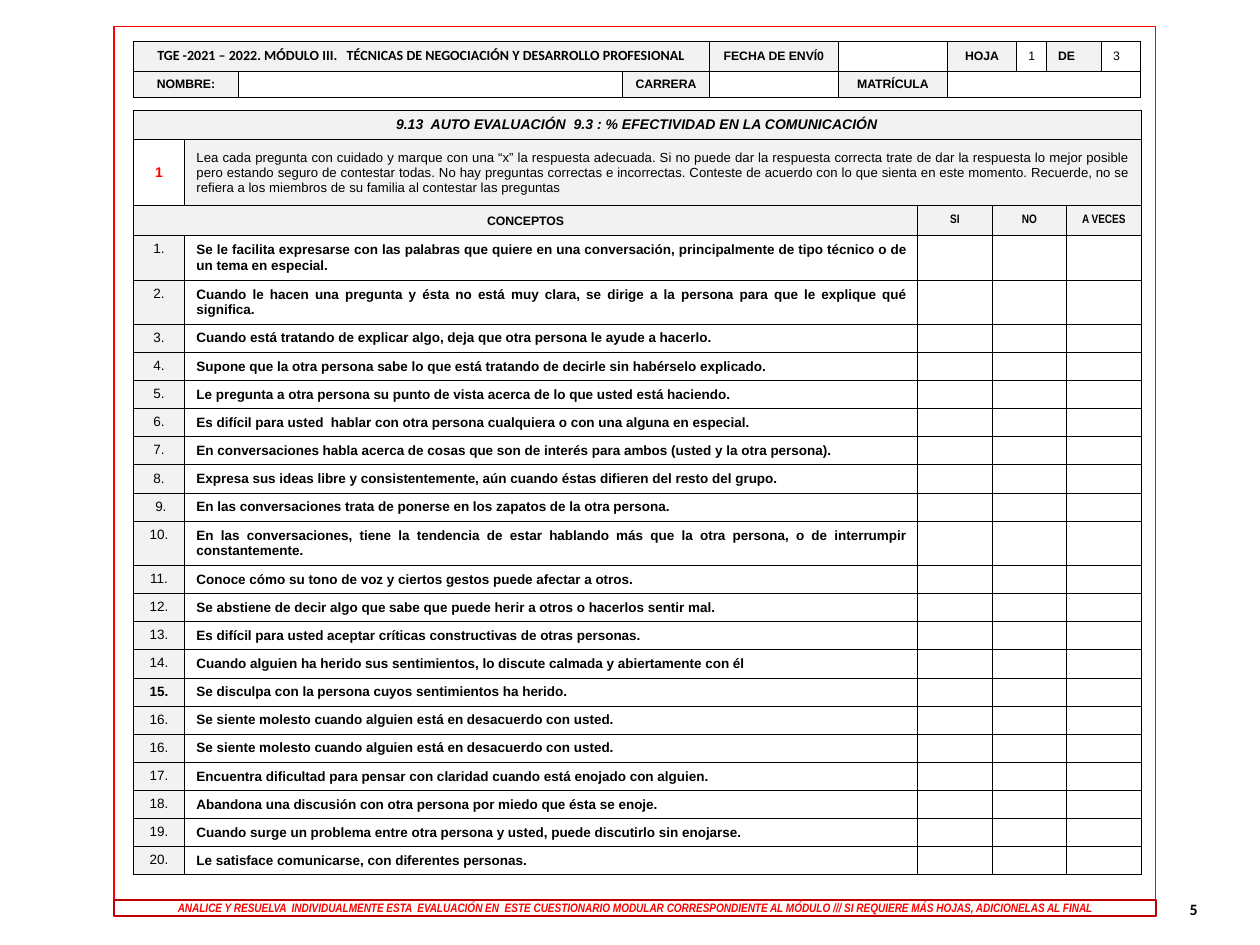
from lxml import etree
from pptx import Presentation
from pptx.dml.color import RGBColor
from pptx.enum.shapes import MSO_SHAPE
from pptx.enum.text import MSO_ANCHOR, PP_ALIGN
from pptx.oxml.ns import qn
from pptx.util import Cm, Pt

LEFT, MID, RIGHT, JUST = PP_ALIGN.LEFT, PP_ALIGN.CENTER, PP_ALIGN.RIGHT, PP_ALIGN.JUSTIFY
TOP, CENTER = MSO_ANCHOR.TOP, MSO_ANCHOR.MIDDLE
RECT = MSO_SHAPE.RECTANGLE
GREY, WHITE, BLACK, RED, DARK = "F2F2F2", "FFFFFF", "000000", "FF0000", "C00000"

HEAD_COLS = [2.12, 7.74, 1.75, 2.6, 2.2, 1.39, 0.6, 1.11, 0.79]
FORM_COLS = [1.03, 14.78, 1.5, 1.5, 1.5]
ONE, TWO = 0.56, 0.87  # heights of rows with one and two lines

TITLE = "9.13  AUTO EVALUACIÓN  9.3 : % EFECTIVIDAD EN LA COMUNICACIÓN"
GUIDE = (
    "Lea cada pregunta con cuidado y marque con una “x” la respuesta adecuada. "
    "Si no puede dar la respuesta correcta trate de dar la respuesta lo mejor posible "
    "pero estando seguro de contestar todas. No hay preguntas correctas e incorrectas. "
    "Conteste de acuerdo con lo que sienta en este momento. Recuerde, no se refiera a "
    "los miembros de su familia al contestar las preguntas"
)
ITEMS = [
    ("1.", "Se le facilita expresarse con las palabras que quiere en una conversación, "
           "principalmente de tipo técnico o de un tema en especial."),
    ("2.", "Cuando le hacen una pregunta y ésta no está muy clara, se dirige a la persona "
           "para que le explique qué significa."),
    ("3.", "Cuando está tratando de explicar algo, deja que otra persona le ayude a hacerlo."),
    ("4.", "Supone que la otra persona sabe lo que está tratando de decirle sin habérselo explicado."),
    ("5.", "Le pregunta a otra persona su punto de vista acerca de lo que usted está haciendo."),
    ("6.", "Es difícil para usted  hablar con otra persona cualquiera o con una alguna en especial."),
    ("7.", "En conversaciones habla acerca de cosas que son de interés para ambos "
           "(usted y la otra persona)."),
    ("8.", "Expresa sus ideas libre y consistentemente, aún cuando éstas difieren del resto del grupo."),
    (" 9.", "En las conversaciones trata de ponerse en los zapatos de la otra persona."),
    ("10.", "En las conversaciones, tiene la tendencia de estar hablando más que la otra "
            "persona, o de interrumpir constantemente."),
    ("11.", "Conoce cómo su tono de voz y ciertos gestos puede afectar a otros."),
    ("12.", "Se abstiene de decir algo que sabe que puede herir a otros o hacerlos sentir mal."),
    ("13.", "Es difícil para usted aceptar críticas constructivas de otras personas."),
    ("14.", "Cuando alguien ha herido sus sentimientos, lo discute calmada y abiertamente con él"),
    ("15.", "Se disculpa con la persona cuyos sentimientos ha herido."),
    ("16.", "Se siente molesto cuando alguien está en desacuerdo con usted."),
    ("16.", "Se siente molesto cuando alguien está en desacuerdo con usted."),
    ("17.", "Encuentra dificultad para pensar con claridad cuando está enojado con alguien."),
    ("18.", "Abandona una discusión con otra persona por miedo que ésta se enoje."),
    ("19.", "Cuando surge un problema entre otra persona y usted, puede discutirlo sin enojarse."),
    ("20.", "Le satisface comunicarse, con diferentes personas."),
]
LONG = {"1.", "2.", "10."}


def color(code):
    return RGBColor.from_string(code)


def write(frame, text, size, face="Arial", ink=BLACK, bold=True, slant=False, align=MID):
    para = frame.paragraphs[0]
    para.text = text
    para.alignment = align
    font = para.font
    font.size, font.name, font.bold, font.italic = Pt(size), face, bold, slant
    font.color.rgb = color(ink)


def border(cell):
    props = cell._tc.get_or_add_tcPr()
    for side in ("lnL", "lnR", "lnT", "lnB"):
        line = etree.SubElement(props, qn("a:" + side), w=str(Pt(0.5)))
        fill = etree.SubElement(line, qn("a:solidFill"))
        etree.SubElement(fill, qn("a:srgbClr"), val=BLACK)


def make_grid(slide, box, cols, rows):
    """Add a plain table with thin black borders and small empty cells."""
    grid = slide.shapes.add_table(len(rows), len(cols), *map(Cm, box)).table
    grid.first_row = grid.horz_banding = False
    for col, width in zip(grid.columns, cols):
        col.width = Cm(width)
    for row, height in zip(grid.rows, rows):
        row.height = Cm(height)
    for cell in grid.iter_cells():
        border(cell)
        cell.fill.background()
        cell.margin_left = cell.margin_right = Cm(0.24)
        cell.margin_top = cell.margin_bottom = Cm(0.12)
        cell.vertical_anchor = CENTER
    return grid


def shrink(grid):
    """Give the empty cells a small type size so that rows keep their height."""
    for cell in grid.iter_cells():
        if not cell.text:
            para = cell.text_frame.paragraphs[0]
            etree.SubElement(para._p, qn("a:endParaRPr"), sz="700")


def put(grid, row, col, text, size=7, fill=GREY, span=1, **style):
    cell = grid.cell(row, col)
    if span > 1:
        cell.merge(grid.cell(row, col + span - 1))
    if fill:
        cell.fill.solid()
        cell.fill.fore_color.rgb = color(fill)
    if text:
        write(cell.text_frame, text, size, **style)
    return cell


def add_head(slide, box):
    grid = make_grid(slide, box, HEAD_COLS, [0.6, 0.5])
    put(grid, 0, 0, "TGE -2021 – 2022. MÓDULO III.   TÉCNICAS DE NEGOCIACIÓN Y DESARROLLO PROFESIONAL",
        8, span=3, face="Calibri")
    put(grid, 0, 3, "FECHA DE ENVÍ0")
    put(grid, 0, 5, "HOJA")
    put(grid, 0, 6, "1", fill=None, bold=False, align=LEFT)
    put(grid, 0, 7, "DE", align=LEFT)
    put(grid, 0, 8, "3", fill=None, bold=False, align=LEFT)
    for col, label in ((0, "NOMBRE:"), (2, "CARRERA"), (4, "MATRÍCULA")):
        put(grid, 1, col, label)
    put(grid, 1, 5, "", fill=None, span=4)
    shrink(grid)


def add_form(slide, box):
    rows = [0.6, 1.33, 0.6] + [TWO if num in LONG else ONE for num, _ in ITEMS]
    grid = make_grid(slide, box, FORM_COLS, rows)
    put(grid, 0, 0, TITLE, 8, span=5, slant=True)
    put(grid, 1, 0, "1", 8, WHITE, ink=RED)
    put(grid, 1, 1, GUIDE, 7.5, span=4, bold=False, align=JUST)
    put(grid, 2, 0, "CONCEPTOS", span=2)
    for col, label in enumerate(("SI", "NO", "A VECES"), 2):
        put(grid, 2, col, label, face="Arial Narrow")
    for row, (num, text) in enumerate(ITEMS, 3):
        mark = put(grid, row, 0, num, 7.7, bold=num == "15.")
        mark.vertical_anchor = TOP
        put(grid, row, 1, text, 7.7, WHITE, align=JUST)
        for col in range(2, 5):
            put(grid, row, col, "", fill=WHITE)
    shrink(grid)


def add_rect(slide, box, ink, width, fill=None):
    rect = slide.shapes.add_shape(RECT, *map(Cm, box))
    rect.shadow.inherit = False
    rect.line.color.rgb = color(ink)
    rect.line.width = Pt(width)
    if fill:
        rect.fill.solid()
        rect.fill.fore_color.rgb = color(fill)
    else:
        rect.fill.background()
    return rect


def add_foot(slide, box):
    frame = add_rect(slide, box, DARK, 1, WHITE).text_frame
    frame.margin_top = frame.margin_bottom = 0
    frame.vertical_anchor = CENTER
    frame.word_wrap = True
    write(frame, "ANALICE Y RESUELVA  INDIVIDUALMENTE ESTA  EVALUACIÓN EN  ESTE CUESTIONARIO MODULAR "
          "CORRESPONDIENTE AL MÓDULO /// SI REQUIERE MÁS HOJAS, ADICIONELAS AL FINAL",
          7, "Arial Narrow", RED, slant=True)


def add_page(slide, box):
    frame = slide.shapes.add_textbox(*map(Cm, box)).text_frame
    frame.word_wrap = True
    frame.vertical_anchor = CENTER
    write(frame, "5", 9, "Calibri", align=RIGHT)


def main():
    deck = Presentation()
    deck.slide_width, deck.slide_height = Cm(25.4), Cm(19.05)
    slide = deck.slides.add_slide(deck.slide_layouts[6])
    add_page(slide, (18.67, 17.82, 5.72, 1.01))
    add_form(slide, (2.69, 2.22, 20.3, 15.2))
    add_rect(slide, (2.3, 0.53, 21, 17.7), RED, 0.75)
    add_head(slide, (2.69, 0.83, 20.3, 1.1))
    add_foot(slide, (2.3, 18.15, 21, 0.31))
    deck.save("out.pptx")


if __name__ == "__main__":
    main()
